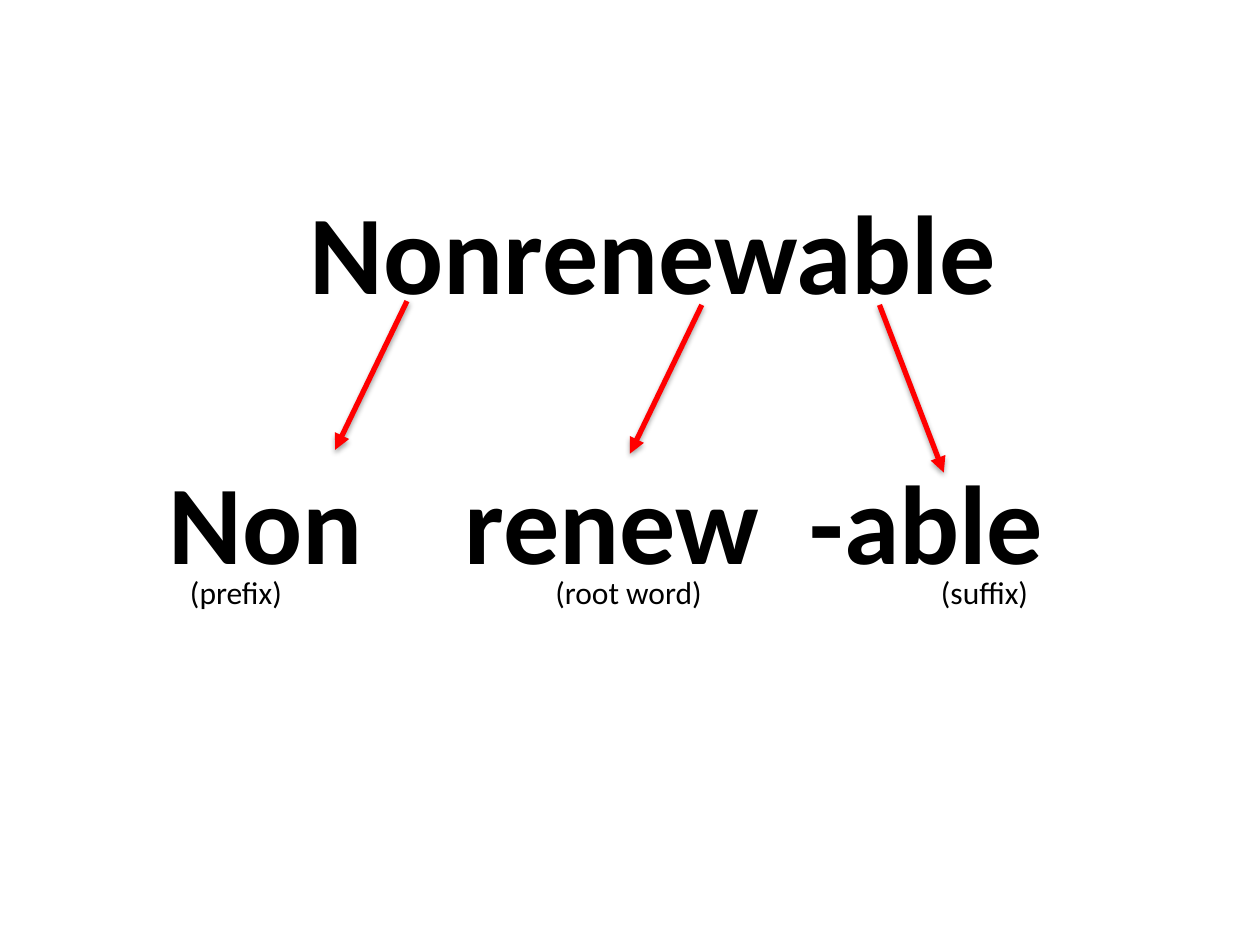
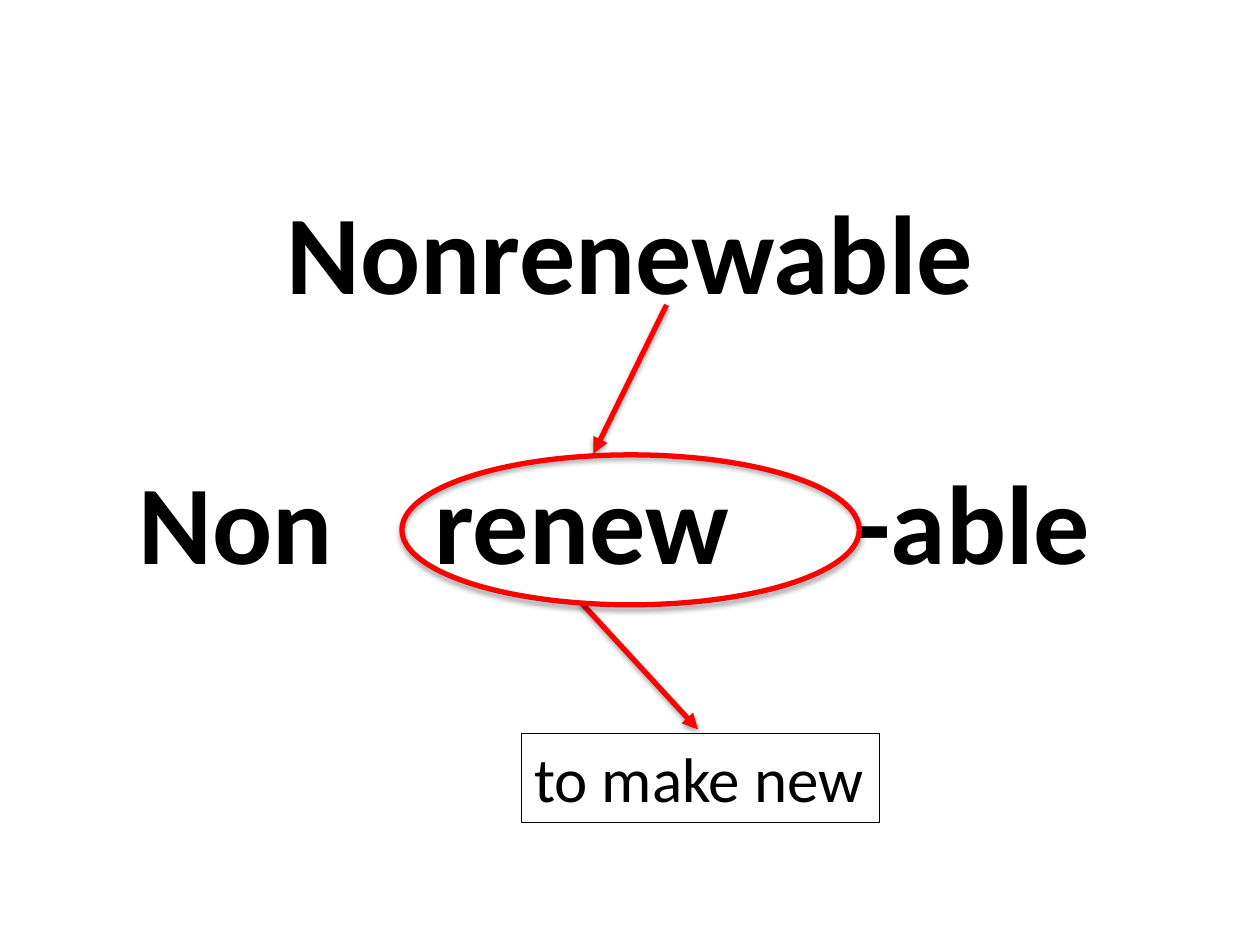
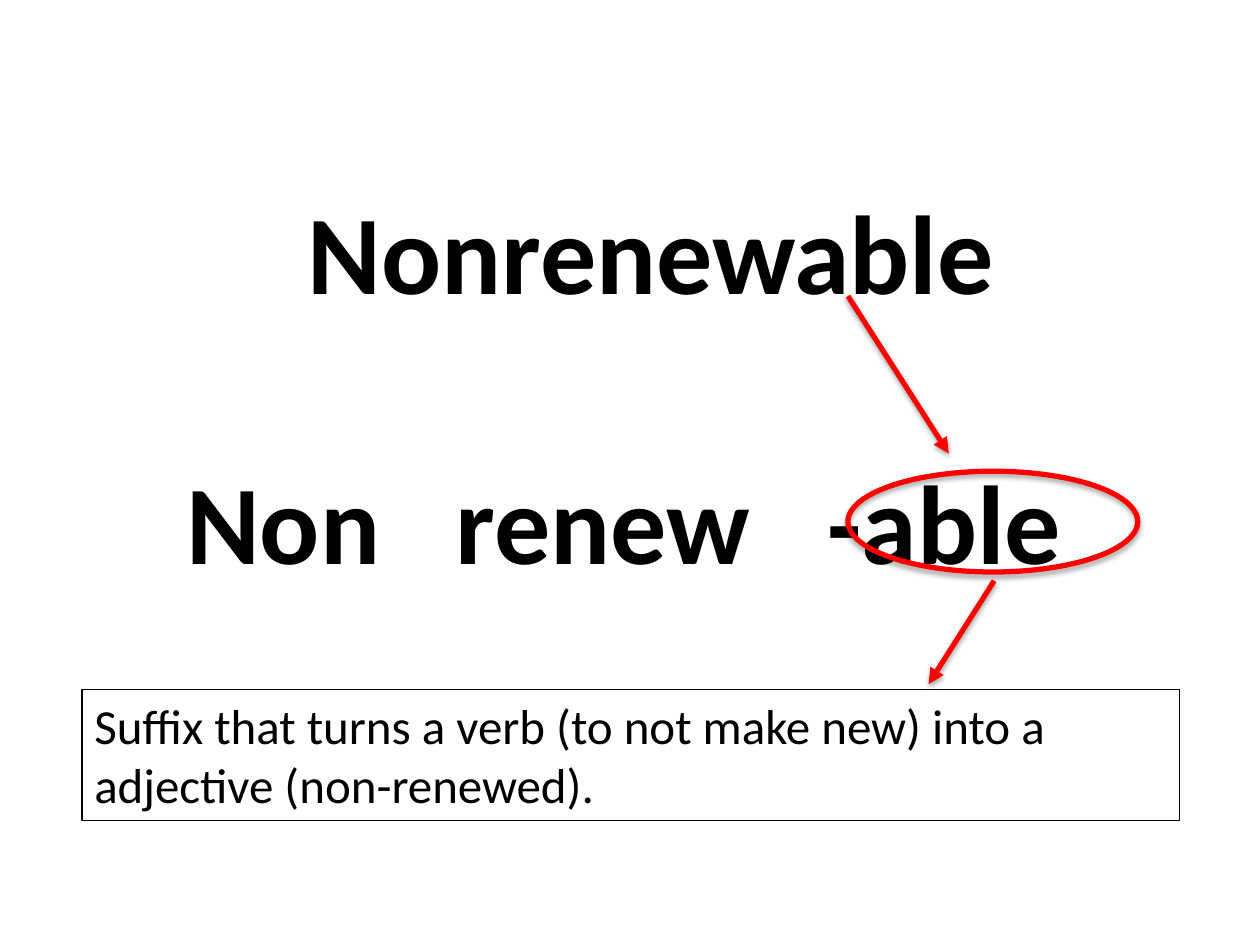
from lxml.etree import SubElement
from pptx import Presentation
from pptx.dml.color import RGBColor
from pptx.enum.shapes import MSO_CONNECTOR, MSO_SHAPE
from pptx.enum.text import MSO_ANCHOR, MSO_AUTO_SIZE, PP_ALIGN
from pptx.oxml.ns import qn
from pptx.util import Inches, Pt

WIDTH, HEIGHT = 10, 7.5
FONT, BLACK, RED = "Calibri", "000000", "FF0000"
WORD = "Nonrenewable"
WORD_SIZE, LABEL_SIZE = 64, 18
WORD_TOP, PARTS_TOP, LABELS_TOP = 1.4, 3.54, 4.5
WORD_HEIGHT, LABEL_HEIGHT = 1.17, 0.4
INSET = 0.1
PART_WIDTHS = {"Non": 1.8, "renew": 2.6, "-able": 2.2}

SLIDES = [
    {
        "word": (1.24, 7.88),
        "part_starts": (1.34, 3.69, 6.43),
        "labels": [("(prefix)", 1.41, 1.74), ("(root word)", 4.31, 1.74), ("(suffix)", 7.37, 0.94)],
        "arrows": [(3.23, 2.39, 2.66, 3.57), (5.57, 2.42, 5, 3.6), (6.98, 2.42, 7.49, 3.75)],
    },
    {
        "word": (0, WIDTH),
        "part_starts": (1.1, 3.45, 6.8),
        "arrows": [(5.29, 2.42, 4.71, 3.6), (4.61, 4.78, 5.54, 5.79)],
        "ring": (3.19, 3.61, 3.63, 1.19),
        "meaning": ("to make new", 36, (4.14, 5.82, 2.84, 0.71)),
    },
    {
        "word": (0.98, 8.37),
        "part_starts": (1.48, 3.62, 6.57),
        "arrows": [(6.73, 2.35, 7.53, 3.6), (7.89, 4.61, 7.37, 5.43)],
        "ring": (6.73, 3.74, 2.3, 0.8),
        "meaning": (
            "Suffix that turns a verb (to not make new) into a adjective (non-renewed).",
            28,
            (0.65, 5.47, 8.71, 1.04),
        ),
    },
]


def color(value):
    return RGBColor.from_string(value)


def inches(values):
    return [Inches(value) for value in values]


def write(box, text, size=LABEL_SIZE, bold=False, align=PP_ALIGN.LEFT):
    frame = box.text_frame
    frame.word_wrap = True
    frame.auto_size = MSO_AUTO_SIZE.NONE
    frame.vertical_anchor = MSO_ANCHOR.TOP
    para = frame.paragraphs[0]
    para.alignment = align
    span = para.add_run()
    span.text = text
    span.font.name = FONT
    span.font.size = Pt(size)
    span.font.bold = bold
    span.font.color.rgb = color(BLACK)


def add_text(page, text, place, **style):
    box = page.shapes.add_textbox(*inches(place))
    write(box, text, **style)
    return box


def outline(shape, value, points):
    shape.line.color.rgb = color(value)
    shape.line.width = Pt(points)


def add_shadow(shape, distance, opacity):
    effects = SubElement(shape.element.spPr, qn("a:effectLst"))
    shadow = SubElement(
        effects, qn("a:outerShdw"), blurRad="40000", dist=str(distance), dir="5400000", rotWithShape="0"
    )
    black = SubElement(shadow, qn("a:srgbClr"), val=BLACK)
    SubElement(black, qn("a:alpha"), val=str(opacity * 1000))


def add_arrow(page, ends):
    arrow = page.shapes.add_connector(MSO_CONNECTOR.STRAIGHT, *inches(ends))
    outline(arrow, RED, 3)
    SubElement(arrow.element.spPr.find(qn("a:ln")), qn("a:tailEnd"), type="triangle")
    add_shadow(arrow, 20000, 37)


def add_ring(page, place):
    ring = page.shapes.add_shape(MSO_SHAPE.OVAL, *inches(place))
    ring.fill.background()
    outline(ring, RED, 3)
    add_shadow(ring, 23000, 35)


def add_word(page, left, width):
    title = page.shapes.title
    title.left, title.top, title.width, title.height = inches((left, WORD_TOP, width, WORD_HEIGHT))
    write(title, WORD, size=WORD_SIZE, bold=True, align=PP_ALIGN.CENTER)


def build_slide(deck, content):
    page = deck.slides.add_slide(deck.slide_layouts[5])
    add_word(page, *content["word"])
    for (part, width), start in zip(PART_WIDTHS.items(), content["part_starts"]):
        add_text(page, part, (start - INSET, PARTS_TOP, width, WORD_HEIGHT), size=WORD_SIZE, bold=True)
    for label, left, width in content.get("labels", []):
        add_text(page, label, (left, LABELS_TOP, width, LABEL_HEIGHT))
    for ends in content["arrows"]:
        add_arrow(page, ends)
    if "ring" in content:
        add_ring(page, content["ring"])
    if "meaning" in content:
        text, size, place = content["meaning"]
        outline(add_text(page, text, place, size=size), BLACK, 0.75)


def main():
    deck = Presentation()
    deck.slide_width, deck.slide_height = inches((WIDTH, HEIGHT))
    for content in SLIDES:
        build_slide(deck, content)
    deck.save("out.pptx")


if __name__ == "__main__":
    main()
